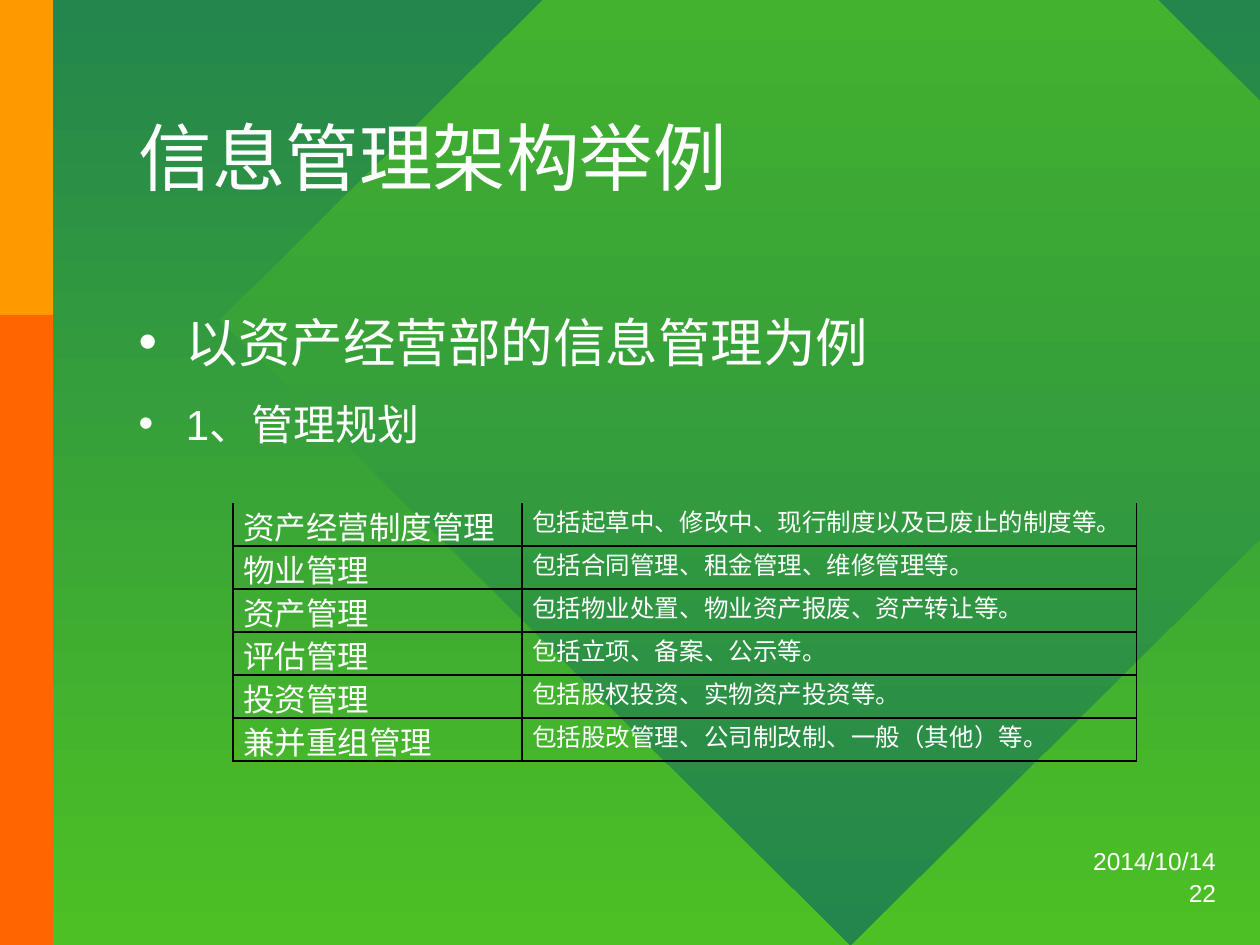
from lxml.etree import SubElement
from pptx import Presentation
from pptx.dml.color import RGBColor
from pptx.enum.shapes import MSO_SHAPE
from pptx.enum.text import MSO_ANCHOR, MSO_AUTO_SIZE, PP_ALIGN
from pptx.oxml.ns import qn
from pptx.util import Inches, Pt

W, H = 10, 7.5
DEEP, LIME, WHITE = "24864C", "4DC024", "FFFFFF"
ROWS = [
    ("资产经营制度管理", "包括起草中、修改中、现行制度以及已废止的制度等。"),
    ("物业管理", "包括合同管理、租金管理、维修管理等。"),
    ("资产管理", "包括物业处置、物业资产报废、资产转让等。"),
    ("评估管理", "包括立项、备案、公示等。"),
    ("投资管理", "包括股权投资、实物资产投资等。"),
    ("兼并重组管理", "包括股改管理、公司制改制、一般（其他）等。"),
]


def rgb(value):
    """Turn a hex string into a colour."""
    return RGBColor.from_string(value)


def place(sp, box):
    """Move a shape to a box given in inches."""
    sp.left, sp.top, sp.width, sp.height = map(Inches, box)


def style(p, size, font="Arial", align=PP_ALIGN.LEFT):
    """Set the font and alignment of a paragraph."""
    p.alignment = align
    p.font.size, p.font.name = Pt(size), font
    p.font.color.rgb = rgb(WHITE)


def shade(fill, top, bottom):
    """Fill with a gradient running from top to bottom."""
    fill.gradient()
    fill.gradient_angle = 270
    for stop, value in zip(fill.gradient_stops, (top, bottom)):
        stop.color.rgb = rgb(value)


def add_plain(s, kind, box):
    """Add a preset shape without line or shadow."""
    sp = s.shapes.add_shape(kind, *map(Inches, box))
    sp.shadow.inherit = False
    sp.line.fill.background()
    return sp


def add_backdrop(s, box):
    """Draw the gradient, the large diamond and the side bands."""
    x, y, w, h = box
    shade(s.background.fill, DEEP, LIME)
    side = 9.92
    diamond = add_plain(s, MSO_SHAPE.DIAMOND, (x + 1.75, y + h - side, w, side))
    shade(diamond.fill, LIME, DEEP)
    for share, value in ((1, "FF6600"), (1 / 3, "FF9900")):
        band = add_plain(s, MSO_SHAPE.RECTANGLE, (x, y, 0.42, h * share))
        band.fill.solid()
        band.fill.fore_color.rgb = rgb(value)


def add_title(s, box, text):
    """Fill the title placeholder."""
    sp = s.shapes.title
    place(sp, box)
    tf = sp.text_frame
    tf.text, tf.vertical_anchor = text, MSO_ANCHOR.MIDDLE
    tf.auto_size = MSO_AUTO_SIZE.NONE
    p = tf.paragraphs[0]
    style(p, 42)
    p.line_spacing = 0.85


def add_body(s, box, items):
    """Fill the body placeholder with bulleted items of given sizes."""
    sp = s.placeholders[1]
    place(sp, box)
    tf = sp.text_frame
    tf.text = "\n".join(text for text, _ in items)
    tf.auto_size = MSO_AUTO_SIZE.NONE
    for p, (_, size) in zip(tf.paragraphs, items):
        style(p, size)
        p.space_before = Pt(size * 0.6)


def add_footer(s, box, text):
    """Add one right-aligned footer line."""
    tf = s.shapes.add_textbox(*map(Inches, box)).text_frame
    tf.text, tf.word_wrap = text, True
    tf.vertical_anchor = MSO_ANCHOR.BOTTOM
    style(tf.paragraphs[0], 14, align=PP_ALIGN.RIGHT)


def set_borders(cell, open_top):
    """Draw black cell borders, leaving the top open on request."""
    tc_pr = cell._tc.get_or_add_tcPr()
    for edge in ("lnL", "lnR", "lnT", "lnB"):
        ln = SubElement(tc_pr, qn(f"a:{edge}"), w=str(Pt(1)))
        if edge == "lnT" and open_top:
            SubElement(ln, qn("a:noFill"))
        else:
            SubElement(SubElement(ln, qn("a:solidFill")), qn("a:srgbClr"), val="000000")


def add_scope_table(s, box, rows):
    """Add the table of management areas and their scope."""
    table = s.shapes.add_table(len(rows), 2, *map(Inches, box)).table
    table.first_row = table.horz_banding = False
    for column, share in zip(table.columns, (0.32, 0.68)):
        column.width = Inches(box[2] * share)
    for i, row in enumerate(rows):
        for j, (text, size) in enumerate(zip(row, (18, 14))):
            cell = table.cell(i, j)
            cell.text = text
            cell.margin_left = cell.margin_right = Inches(0.08)
            cell.margin_top = cell.margin_bottom = 0
            style(cell.text_frame.paragraphs[0], size, "Calibri", PP_ALIGN.JUSTIFY)
            set_borders(cell, i == 0)
            cell.fill.background()


def main():
    """Build and save the slide."""
    prs = Presentation()
    prs.slide_width, prs.slide_height = Inches(W), Inches(H)
    s = prs.slides.add_slide(prs.slide_layouts[1])
    add_backdrop(s, (0, 0, W, H))
    tree = s.shapes._spTree
    for holder in list(s.placeholders):
        tree.append(holder._element)
    left, width = W * 0.1, W * 0.825
    add_title(s, (left, 0.67, width, H / 6), "信息管理架构举例")
    add_body(s, (left, 2.41, width, 4.09), [("以资产经营部的信息管理为例", 30), ("1、管理规划", 24)])
    add_footer(s, (7.25, 6.67, W / 4, 0.33), "2014/10/14")
    add_footer(s, (7.25, 7, W / 4, 0.25), "22")
    add_scope_table(s, (1.85, 3.99, 7.17, 2.05), ROWS)
    prs.save("out.pptx")


if __name__ == "__main__":
    main()
